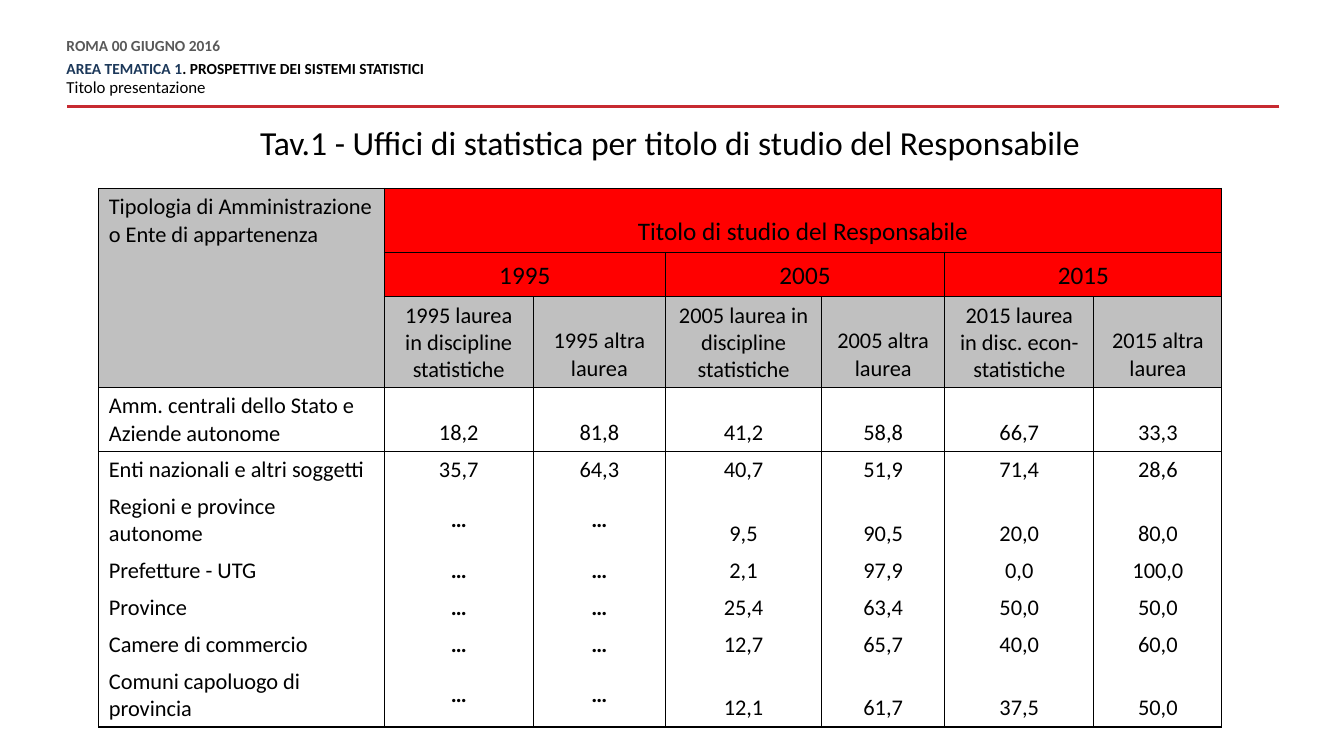
from lxml import etree
from pptx import Presentation
from pptx.dml.color import RGBColor
from pptx.enum import shapes, text
from pptx.oxml import ns
from pptx.util import Inches, Pt

THEME = {
    "font": "Calibri",
    "black": "000000", "white": "FFFFFF", "grey": "C0C0C0", "red": "FF0000",
    "date": "595959", "area": "1C385A", "rule": "C72A31",
    "small": 11, "label": 12, "cell": 16, "group": 18, "title": 24,
}

# (runs of text and colour, size, bold, space before, space after)
HEADER = [
    ([("ROMA 00 GIUGNO 2016", "date")], "small", True, 0, 6),
    ([("AREA TEMATICA 1", "area"),
      (". PROSPETTIVE DEI SISTEMI STATISTICI", "black")], "small", True, 0, 0),
    ([("Titolo presentazione", "black")], "label", False, 3, 6),
]
TITLE = "Tav.1 - Uffici di statistica per titolo di studio del Responsabile"
CORNER = "Tipologia di Amministrazione o Ente di appartenenza"
GROUP = "Titolo di studio del Responsabile"
YEARS = ["1995", "2005", "2015"]
DEGREES = [
    "1995 laurea in discipline statistiche", "1995 altra laurea",
    "2005 laurea in discipline statistiche", "2005 altra laurea",
    "2015 laurea in disc. econ-statistiche", "2015 altra laurea",
]
OFFICES = [
    ("Amm. centrali dello Stato e Aziende autonome",
     "18,2", "81,8", "41,2", "58,8", "66,7", "33,3"),
    ("Enti nazionali e altri soggetti",
     "35,7", "64,3", "40,7", "51,9", "71,4", "28,6"),
    ("Regioni e province autonome", "…", "…", "9,5", "90,5", "20,0", "80,0"),
    ("Prefetture - UTG", "…", "…", "2,1", "97,9", "0,0", "100,0"),
    ("Province", "…", "…", "25,4", "63,4", "50,0", "50,0"),
    ("Camere di commercio", "…", "…", "12,7", "65,7", "40,0", "60,0"),
    ("Comuni capoluogo di provincia",
     "…", "…", "12,1", "61,7", "37,5", "50,0"),
]
COLS = [2.83, 1.48, 1.31, 1.55, 1.22, 1.48, 1.27]
ROWS = [0.63, 0.44, 0.9, 0.5, 0.34, 0.36, 0.34, 0.34, 0.34, 0.29]
HEAD = 3
NO_STYLE = "{2D5ABB26-0587-4C30-8999-92F81FD0307C}"


def color(name):
    return RGBColor.from_string(THEME[name])


def write(para, words, size, ink="black", bold=False):
    run = para.add_run()
    run.text = words
    run.font.name = THEME["font"]
    run.font.size = Pt(THEME[size])
    run.font.bold = bold
    run.font.color.rgb = color(ink)


def add_box(slide, *place):
    frame = slide.shapes.add_textbox(*map(Inches, place)).text_frame
    frame.word_wrap = True
    frame.auto_size = text.MSO_AUTO_SIZE.SHAPE_TO_FIT_TEXT
    return frame


def border(cell, sides):
    """Draw black 1 pt edges on the sides named by L, R, T and B."""
    props = cell._tc.get_or_add_tcPr()
    for spot, side in enumerate(sides):
        line = etree.Element(ns.qn("a:ln" + side), w=str(Pt(1)))
        fill = etree.SubElement(line, ns.qn("a:solidFill"))
        etree.SubElement(fill, ns.qn("a:srgbClr"), val=THEME["black"])
        props.insert(spot, line)


def fill_cell(cell, words, back, sides, size="cell", center=True):
    cell.fill.solid()
    cell.fill.fore_color.rgb = color(back)
    border(cell, sides)
    middle = words in ("…", CORNER)
    cell.vertical_anchor = (text.MSO_ANCHOR.MIDDLE if middle
                            else text.MSO_ANCHOR.BOTTOM)
    para = cell.text_frame.paragraphs[0]
    if center:
        para.alignment = text.PP_ALIGN.CENTER
    if words:
        write(para, words, size, bold=words == "…")


def add_header(slide):
    rule = slide.shapes.add_connector(
        shapes.MSO_CONNECTOR.STRAIGHT,
        *map(Inches, (12.69, 1.06, 0.66, 1.06)))
    rule.line.color.rgb = color("rule")
    rule.line.width = Pt(2)
    etree.SubElement(rule._element.spPr, ns.qn("a:effectLst"))

    frame = add_box(slide, 0.66, 0.39, 8.34, 0.59)
    frame.margin_left = frame.margin_right = 0
    frame.margin_top = frame.margin_bottom = 0
    for i, (runs, size, bold, before, after) in enumerate(HEADER):
        para = frame.add_paragraph() if i else frame.paragraphs[0]
        para.line_spacing = Pt(10.8)
        para.space_before = Pt(before)
        para.space_after = Pt(after)
        for words, ink in runs:
            write(para, words, size, ink, bold)


def add_grid(slide):
    graphic = slide.shapes.add_table(
        len(ROWS), len(COLS), *map(Inches, (0.98, 1.87, 11.12, 5.34)))
    table = graphic.table
    table.first_row = table.horz_banding = False
    table._tbl.tblPr.find(ns.qn("a:tableStyleId")).text = NO_STYLE
    for col, width in zip(table.columns, COLS):
        col.width = Inches(width)
    for row, height in zip(table.rows, ROWS):
        row.height = Inches(height)
    graphic.height = Inches(5.34)

    for r, (words, sides) in enumerate([(CORNER, "LRT"), ("", "LR"), ("", "LRB")]):
        fill_cell(table.cell(r, 0), words, "grey", sides, center=False)

    bands = [(0, 1, 6, GROUP)]
    bands += [(1, 1 + 2 * i, 2, year) for i, year in enumerate(YEARS)]
    for r, c, span, words in bands:
        cell = table.cell(r, c)
        cell.merge(table.cell(r, c + span - 1))
        fill_cell(cell, words, "red", "LRTB", "group")

    for c, words in enumerate(DEGREES, 1):
        fill_cell(table.cell(2, c), words, "grey", "LRTB")

    last = len(ROWS) - 1
    for r, office in enumerate(OFFICES, HEAD):
        sides = "LR" + "T" * (r == HEAD) + "B" * (r == last)
        for c, words in enumerate(office):
            fill_cell(table.cell(r, c), words, "white", sides, center=c > 0)


def main():
    deck = Presentation()
    deck.slide_width, deck.slide_height = Inches(13.33), Inches(7.5)
    slide = deck.slides.add_slide(deck.slide_layouts[6])
    add_header(slide)
    add_grid(slide)
    para = add_box(slide, 2.06, 1.16, 9.17, 0.51).paragraphs[0]
    para.alignment = text.PP_ALIGN.CENTER
    write(para, TITLE, "title")
    deck.save("out.pptx")


if __name__ == "__main__":
    main()
